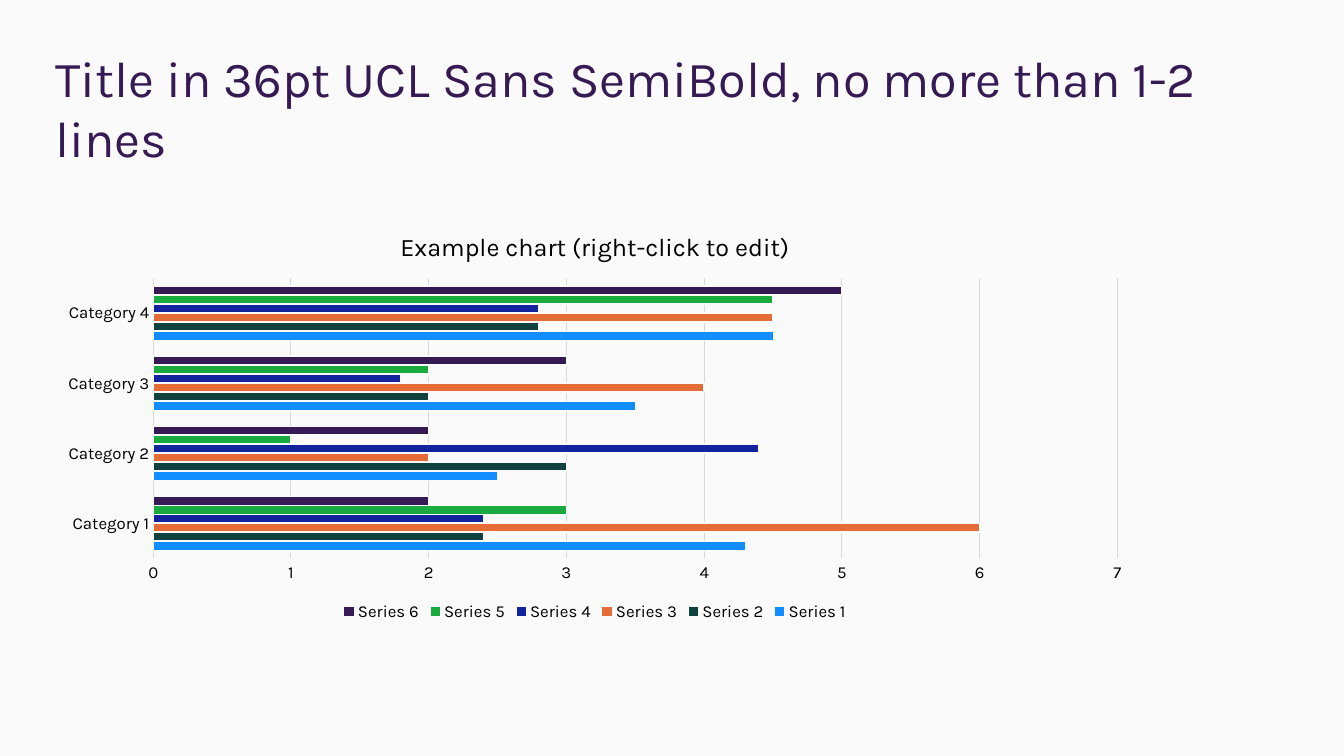
from pptx import Presentation
from pptx.chart.data import CategoryChartData as ChartData
from pptx.dml.color import RGBColor
from pptx.enum.chart import XL_CHART_TYPE as ChartType
from pptx.enum.chart import XL_LEGEND_POSITION as LegendPosition
from pptx.enum.chart import XL_TICK_MARK as TickMark
from pptx.enum.text import MSO_ANCHOR as Anchor
from pptx.util import Inches, Pt

BACKGROUND = RGBColor(0xFA, 0xFA, 0xFA)
BLACK = RGBColor(0x00, 0x00, 0x00)
PURPLE = RGBColor(0x36, 0x1A, 0x54)
GRID_GREY = RGBColor(0xD9, 0xD9, 0xD9)
SKY = RGBColor(0x11, 0x8D, 0xFF)
PINE = RGBColor(0x10, 0x43, 0x3F)
ORANGE = RGBColor(0xE6, 0x6C, 0x37)
NAVY = RGBColor(0x12, 0x23, 0x9E)
GREEN = RGBColor(0x1A, 0xAB, 0x40)

CATEGORIES = [f"Category {number}" for number in range(1, 5)]
SERIES = [
    ((4.3, 2.5, 3.5, 4.5), SKY, 0.75),
    ((2.4, 3, 2, 2.8), PINE, 1.25),
    ((6, 2, 4, 4.5), ORANGE, 1.25),
    ((2.4, 4.4, 1.8, 2.8), NAVY, 1.25),
    ((3, 1, 2, 4.5), GREEN, 1.25),
    ((2, 2, 3, 5), PURPLE, 1.25),
]


def set_format(target, values):
    for name, value in values.items():
        setattr(target, name, value)


class SlideBuilder:
    WIDTH, HEIGHT = 13.33, 7.5
    FONT = "Karla"

    def __init__(self, presentation):
        set_format(presentation, {"slide_width": Inches(self.WIDTH),
                                  "slide_height": Inches(self.HEIGHT)})
        self.slide = presentation.slides.add_slide(presentation.slide_layouts[6])
        fill = self.slide.background.fill
        fill.solid()
        fill.fore_color.rgb = BACKGROUND

    def box(self, left, top, width, height):
        """Turn percentages of the slide's size into lengths."""
        return (Inches(self.WIDTH * left / 100), Inches(self.HEIGHT * top / 100),
                Inches(self.WIDTH * width / 100), Inches(self.HEIGHT * height / 100))

    def style_font(self, font, size, color):
        set_format(font, {"name": self.FONT, "size": Pt(size), "bold": False})
        font.color.rgb = color

    def style_line(self, line, color, width):
        line.color.rgb = color
        line.width = Pt(width)

    def title(self, text, share):
        frame = self.slide.shapes.add_textbox(*self.box(*share)).text_frame
        set_format(frame, {"word_wrap": True, "vertical_anchor": Anchor.MIDDLE})
        run = frame.paragraphs[0].add_run()
        run.text = text
        self.style_font(run.font, 36, PURPLE)

    def bar_chart(self, heading, categories, series_rows, share):
        data = ChartData()
        data.categories = categories
        for number, (values, _, _) in enumerate(series_rows, 1):
            data.add_series(f"Series {number}", values)
        chart = self.slide.shapes.add_chart(
            ChartType.BAR_CLUSTERED, *self.box(*share), data).chart
        self.style_font(chart.font, 10, BLACK)

        run = chart.chart_title.text_frame.paragraphs[0].add_run()
        run.text = heading
        self.style_font(run.font, 18, BLACK)
        chart.chart_title.include_in_layout = False

        chart.has_legend = True
        set_format(chart.legend, {"position": LegendPosition.BOTTOM,
                                  "include_in_layout": False})
        self.style_font(chart.legend.font, 12, BLACK)
        self.style_axes(chart)
        self.style_bars(chart.plots[0], series_rows)

    def style_axes(self, chart):
        for axis in (chart.category_axis, chart.value_axis):
            set_format(axis, {"major_tick_mark": TickMark.NONE,
                              "minor_tick_mark": TickMark.NONE})
            self.style_font(axis.tick_labels.font, 12, BLACK)
        self.style_line(chart.category_axis.format.line, GRID_GREY, 0.75)
        chart.value_axis.format.line.fill.background()
        self.style_line(chart.value_axis.major_gridlines.format.line, GRID_GREY, 0.75)

    def style_bars(self, plot, series_rows):
        set_format(plot, {"gap_width": 182, "overlap": 0, "vary_by_categories": False})
        for series, (_, color, outline) in zip(plot.series, series_rows):
            series.format.fill.solid()
            series.format.fill.fore_color.rgb = color
            self.style_line(series.format.line, BACKGROUND, outline)


def main():
    presentation = Presentation()
    builder = SlideBuilder(presentation)
    builder.title("Title in 36pt UCL Sans SemiBold, no more than 1-2 lines",
                  (3.38, 6.13, 90.92, 16.13))
    builder.bar_chart("Example chart (right-click to edit)", CATEGORIES, SERIES,
                      (3.45, 28, 81.62, 54.8))
    presentation.save("out.pptx")


if __name__ == "__main__":
    main()
